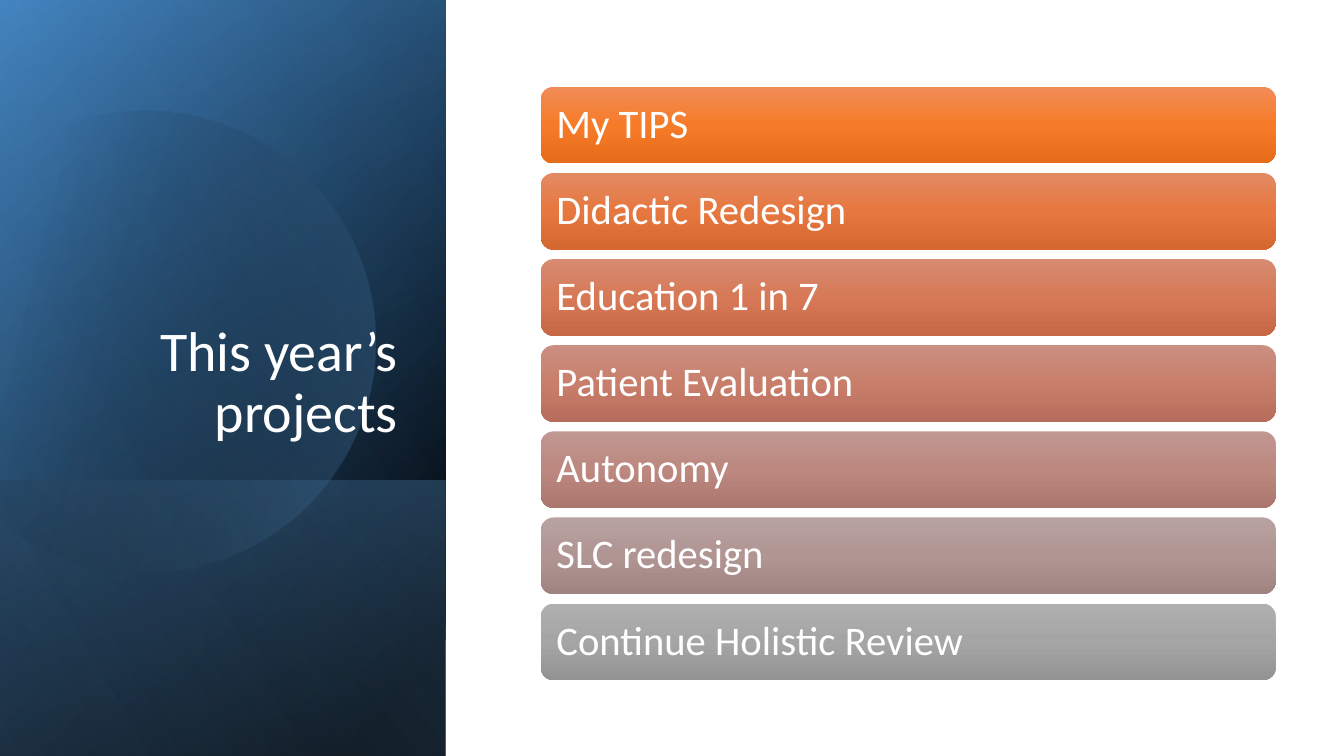
from dataclasses import dataclass
from itertools import pairwise
from math import cos, radians, sin, tan

from lxml.etree import SubElement
from pptx import Presentation
from pptx.dml.color import RGBColor
from pptx.enum.shapes import MSO_SHAPE
from pptx.enum.text import MSO_ANCHOR, MSO_AUTO_SIZE, PP_ALIGN
from pptx.oxml.ns import qn
from pptx.util import Cm, Pt


@dataclass(frozen=True)
class Theme:
    font: str = "Calibri"
    title_size: int = 40
    bar_size: int = 29
    text: str = "FFFFFF"
    black: str = "000000"
    deep_blue: str = "2E75B6"
    blue: str = "5B9BD5"
    pale_blue: str = "9DC3E6"


THEME = Theme()
SIDEBAR_WIDTH = 11.23
SLIDE_HEIGHT = 19.05

# Top, middle and bottom colour of each bar
PROJECTS = [
    ("My TIPS", ("F18C57", "F67B28", "E56C19")),
    ("Didactic Redesign", ("E38A63", "E6773F", "D56730")),
    ("Education 1 in 7", ("D78B72", "D77956", "C66846")),
    ("Patient Evaluation", ("CB8F81", "C97E6B", "B76D5B")),
    ("Autonomy", ("C19791", "BC8880", "AA766E")),
    ("SLC redesign", ("B7A2A0", "B09593", "9E8381")),
    ("Continue Holistic Review", ("AFAFAF", "A5A5A5", "939393")),
]

# Top and height in cm, clockwise gradient angle, stops (position, colour, opacity)
BASE_PANELS = [
    (0, SLIDE_HEIGHT, 50, [(8, THEME.black, 100), (100, THEME.deep_blue, 100)]),
    (0, SLIDE_HEIGHT, 30, [(0, THEME.black, 0), (99, THEME.blue, 46)]),
    (12.1, 6.95, 130, [(2, THEME.blue, 29), (100, THEME.black, 30)]),
]
TOP_PANEL = (0, SLIDE_HEIGHT, 120, [(0, THEME.black, 0), (99, THEME.pale_blue, 11)])


def set_format(target, values):
    for name, value in values.items():
        setattr(target, name, value)


def fill_gradient(shape, angle, stops):
    """Fill with stops of (position, colour, opacity), all in percent."""
    shape.shadow.inherit = False
    shape.line.fill.background()
    shape.fill.gradient()
    shape.fill.gradient_angle = 360 - angle
    stop_list = shape.element.spPr.find(qn("a:gradFill")).find(qn("a:gsLst"))
    for old_stop in list(stop_list):
        stop_list.remove(old_stop)
    for position, colour, opacity in stops:
        stop = SubElement(stop_list, qn("a:gs"), pos=str(position * 1000))
        tint = SubElement(stop, qn("a:srgbClr"), val=colour)
        if opacity < 100:
            SubElement(tint, qn("a:alpha"), val=str(opacity * 1000))


def write_text(shape, text, size, frame_format, para_format):
    frame = shape.text_frame
    set_format(frame, {"word_wrap": True, "auto_size": MSO_AUTO_SIZE.NONE, **frame_format})
    para = frame.paragraphs[0]
    set_format(para, {"line_spacing": 0.9, **para_format})
    span = para.add_run()
    span.text = text
    set_format(span.font, {"name": THEME.font, "size": Pt(size)})
    span.font.color.rgb = RGBColor.from_string(THEME.text)


def add_panel(page, top, height, angle, stops):
    """Add a sidebar panel turned by 90 degrees and mirrored, which turns its gradient."""
    shift = (SIDEBAR_WIDTH - height) / 2
    panel = page.shapes.add_shape(
        MSO_SHAPE.RECTANGLE, Cm(shift), Cm(top - shift), Cm(height), Cm(SIDEBAR_WIDTH))
    panel.rotation = 90
    panel.element.spPr.xfrm.set("flipH", "1")
    fill_gradient(panel, angle, stops)


def arc_points(centre_x, centre_y, radius, degrees):
    """Return the start, then two control points and an end for each arc piece."""
    def point(angle, along=0):
        return (Cm(centre_x + radius * (cos(angle) - along * sin(angle))),
                Cm(centre_y + radius * (sin(angle) + along * cos(angle))))

    angles = [radians(degree) for degree in degrees]
    points = [point(angles[0])]
    for start, end in pairwise(angles):
        pull = 4 / 3 * tan((end - start) / 4)
        points += [point(start, pull), point(end, -pull), point(end)]
    return points


def curve_lines(shape):
    """Turn each three line segments of a freeform into one Bézier curve."""
    lines = list(shape.element.spPr.iter(qn("a:lnTo")))
    for first in range(0, len(lines), 3):
        piece = lines[first:first + 3]
        outline = piece[0].getparent()
        curve = SubElement(outline, qn("a:cubicBezTo"))
        outline.replace(piece[0], curve)
        for line in piece:
            curve.append(line[0])
        for line in piece[1:]:
            outline.remove(line)


def add_cut_circle(page):
    """Add the large circle whose left side is cut off by a chord."""
    points = arc_points(3.62, 8.5, 5.82, (-118, -90, 0, 90, 150))
    builder = page.shapes.build_freeform(*points[0])
    builder.add_line_segments(points[1:], close=True)
    circle = builder.convert_to_shape()
    curve_lines(circle)
    circle.rotation = 343.9
    fill_gradient(circle, 30, [(29, THEME.black, 0), (100, THEME.blue, 43)])


def place_title(page, text):
    title = page.shapes.title
    set_format(title, {"left": Cm(1.62), "top": Cm(4.68),
                       "width": Cm(8.66), "height": Cm(6.65)})
    write_text(title, text, THEME.title_size,
               {"vertical_anchor": MSO_ANCHOR.BOTTOM}, {"alignment": PP_ALIGN.RIGHT})
    page.shapes.element.append(title.element)  # in front of the panels


def add_bar(page, top, text, colours):
    bar = page.shapes.add_shape(
        MSO_SHAPE.ROUNDED_RECTANGLE, Cm(13.63), Cm(top), Cm(18.52), Cm(1.93))
    fill_gradient(bar, 90, [(50 * i, colour, 100) for i, colour in enumerate(colours)])
    write_text(bar, text, THEME.bar_size,
               {"vertical_anchor": MSO_ANCHOR.MIDDLE, "margin_left": Cm(0.3),
                "margin_right": Cm(0.3), "margin_top": 0, "margin_bottom": 0},
               {"alignment": PP_ALIGN.LEFT})


def main():
    deck = Presentation()
    set_format(deck, {"slide_width": Cm(33.87), "slide_height": Cm(SLIDE_HEIGHT)})
    page = deck.slides.add_slide(deck.slide_layouts.get_by_name("Title Only"))
    for panel in BASE_PANELS:
        add_panel(page, *panel)
    add_cut_circle(page)
    add_panel(page, *TOP_PANEL)
    place_title(page, "This year’s projects")
    for row, (text, colours) in enumerate(PROJECTS):
        add_bar(page, 2.19 + 2.17 * row, text, colours)
    deck.save("out.pptx")


if __name__ == "__main__":
    main()
